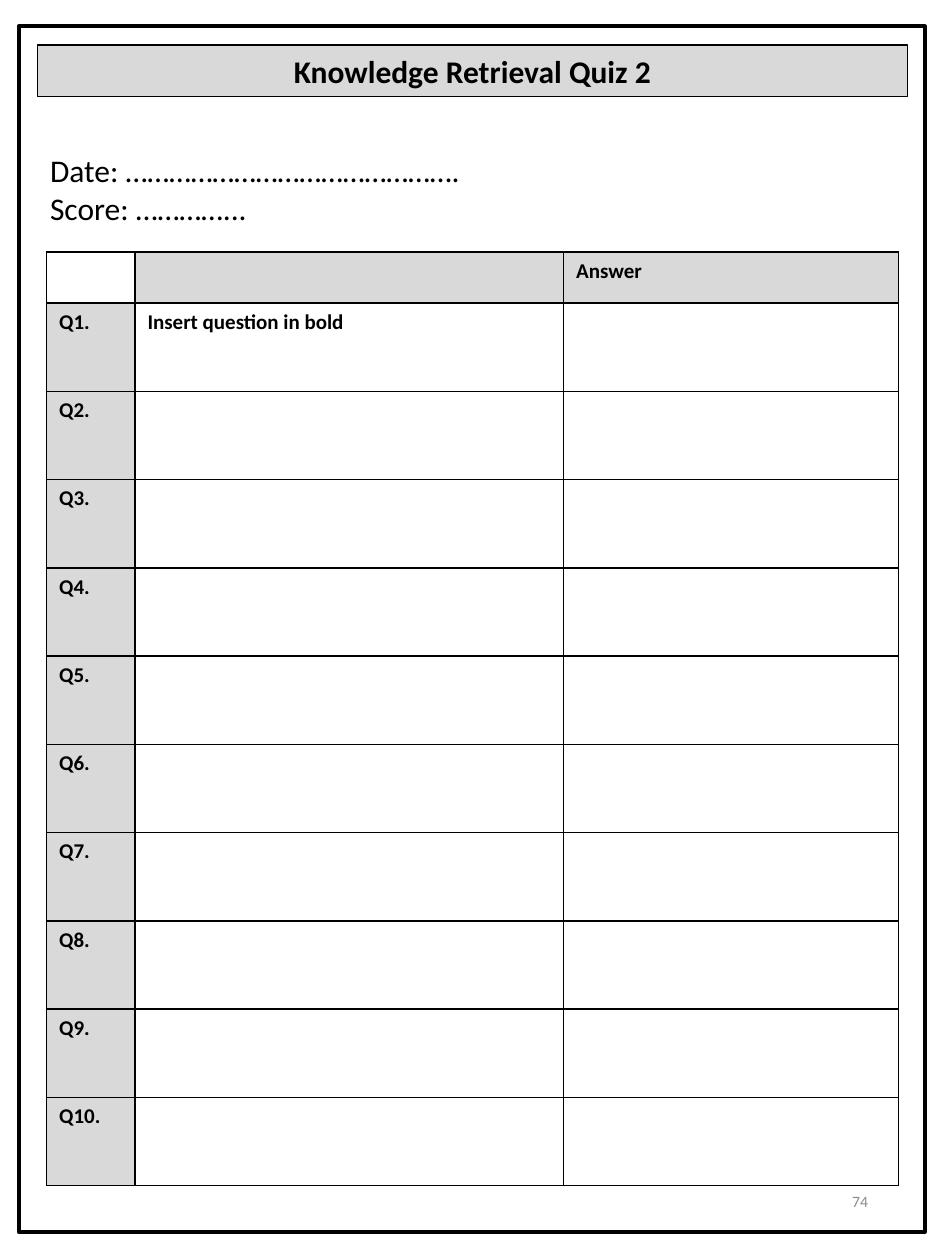
from lxml import etree
from pptx import Presentation
from pptx.dml.color import RGBColor
from pptx.enum import shapes, text
from pptx.oxml import ns
from pptx.util import Cm, Pt

BLACK, GREY = "000000", "D9D9D9"


def paint(fmt, hue):
    fmt.solid()
    fmt.fore_color.rgb = RGBColor.from_string(hue)


def write(para, words, size, hue=BLACK, bold=False, align=text.PP_ALIGN.LEFT):
    para.alignment = align
    run = para.add_run()
    run.text = words
    run.font.name, run.font.size, run.font.bold = "Calibri", Pt(size), bold
    paint(run.font.fill, hue)


def place(shape, box):
    shape.left, shape.top, shape.width, shape.height = map(Cm, box)


def outline(shape, width):
    paint(shape.line.fill, BLACK)
    shape.line.width = Pt(width)


def edge(cell, width=1):
    """Draw all four borders, which must precede the cell fill."""
    props = cell._tc.get_or_add_tcPr()
    for i, side in enumerate(("lnL", "lnR", "lnT", "lnB")):
        line = etree.Element(ns.qn("a:" + side), w=str(Pt(width)))
        fill = etree.SubElement(line, ns.qn("a:solidFill"))
        etree.SubElement(fill, ns.qn("a:srgbClr"), val=BLACK)
        props.insert(i, line)


def add_frame(slide, box):
    frame = slide.shapes.add_shape(shapes.MSO_SHAPE.RECTANGLE, *map(Cm, box))
    frame.shadow.inherit = False
    frame.fill.background()
    outline(frame, 2.25)


def add_title(slide, box):
    title = slide.shapes.title
    place(title, box)
    paint(title.fill, GREY)
    outline(title, 0.75)
    frame = title.text_frame
    frame.auto_size = text.MSO_AUTO_SIZE.NONE
    frame.vertical_anchor = text.MSO_ANCHOR.MIDDLE
    write(frame.paragraphs[0], "Knowledge Retrieval Quiz 2", 18,
          bold=True, align=text.PP_ALIGN.CENTER)


def add_text(slide, box, lines, size, **style):
    frame = slide.shapes.add_textbox(*map(Cm, box)).text_frame
    frame.word_wrap = True
    for i, line in enumerate(lines):
        para = frame.add_paragraph() if i else frame.paragraphs[0]
        write(para, line, size, **style)
    return frame


def add_quiz(slide, box, count=10):
    left, top, width, height = box
    table = slide.shapes.add_table(count + 1, 3, *map(Cm, box)).table
    table.first_row = table.horz_banding = False

    # Narrow label column, wide question column, answer in what is left
    tag, ask = 1.78, 8.64
    for col, size in zip(table.columns, (tag, ask, width - tag - ask)):
        col.width = Cm(size)
    head = 1.03
    for i, row in enumerate(table.rows):
        row.height = Cm((height - head) / count if i else head)

    words = {(0, 2): "Answer", (1, 1): "Insert question in bold"}
    words.update({(n, 0): f"Q{n}." for n in range(1, count + 1)})
    for r, row in enumerate(table.rows):
        for c, cell in enumerate(row.cells):
            # Grey header row and label column, but a clear corner
            if (r == 0) != (c == 0):
                paint(cell.fill, GREY)
            else:
                cell.fill.background()
            edge(cell)
            if (r, c) in words:
                write(cell.text_frame.paragraphs[0], words[r, c], 12, bold=True)


def main():
    deck = Presentation()
    deck.slide_width, deck.slide_height = Cm(19.05), Cm(25.4)
    slide = deck.slides.add_slide(deck.slide_layouts[5])

    # Page border and heading
    add_frame(slide, (0.38, 0.53, 18.26, 24.31))
    add_title(slide, (0.76, 0.91, 17.53, 1.03))

    # Date and score lines
    add_text(slide, (0.76, 2.92, 13.08, 1.8),
             ["Date: ……………………………………….", "Score: …………..."], 18)

    # Question grid
    add_quiz(slide, (0.94, 5.08, 17.17, 18.83))

    # Page number
    page = add_text(slide, (13.46, 23.55, 4.29, 1.35), ["74"], 9,
                    hue="8C8C8C", align=text.PP_ALIGN.RIGHT)
    page.vertical_anchor = text.MSO_ANCHOR.MIDDLE

    deck.save("out.pptx")


if __name__ == "__main__":
    main()
